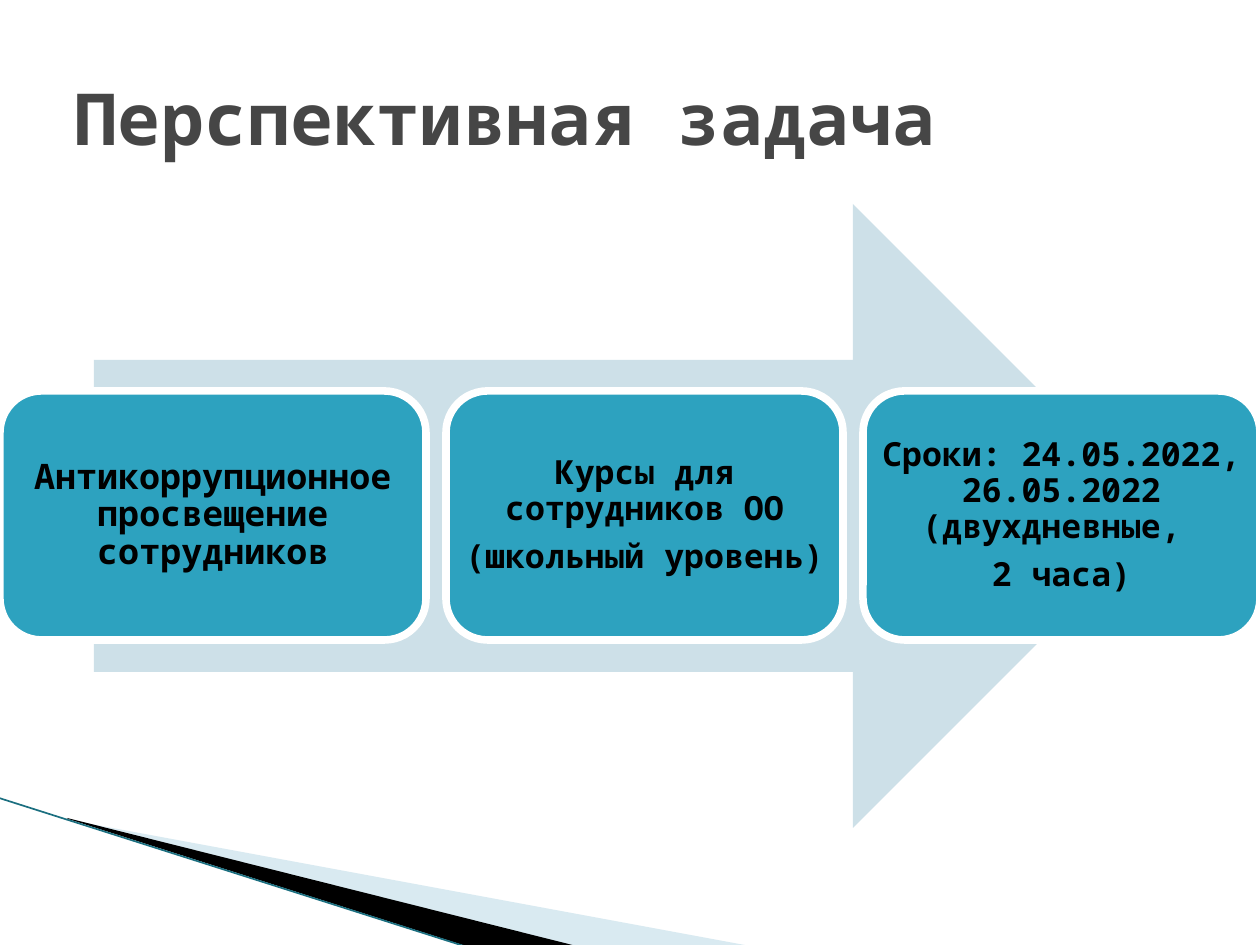
from lxml import etree
from pptx import Presentation, util as u
from pptx.dml.color import RGBColor
from pptx.enum import shapes, text
from pptx.oxml.ns import qn

SCALE = 914400 / 126  # EMU per px
FONT = "Noto Sans Mono"


def px(*values):
    return [u.Emu(round(value * SCALE)) for value in values]


def write(shape, lines, size, color="000000", align=text.PP_ALIGN.CENTER, spacing=0.9, gap=7, inset=0):
    frame = shape.text_frame
    frame.word_wrap = True
    frame.vertical_anchor = text.MSO_ANCHOR.MIDDLE
    frame.margin_left = frame.margin_right = frame.margin_top = frame.margin_bottom = px(inset)[0]
    for index, line in enumerate(lines):
        paragraph = frame.add_paragraph() if index else frame.paragraphs[0]
        paragraph.text = line
        paragraph.alignment = align
        paragraph.line_spacing = spacing
        if index:
            paragraph.space_before = u.Pt(gap)
        font = paragraph.font
        font.name, font.size, font.bold = FONT, u.Pt(size), True
        font.color.rgb = RGBColor.from_string(color)


presentation = Presentation()
presentation.slide_width, presentation.slide_height = px(1260, 945)
slide = presentation.slides.add_slide(presentation.slide_layouts[6])

# Corner wedges: points, colour, opacity in percent
wedges = [
    ([(69, 820), (750, 946), (575, 946), (69, 819)], "A0CBDC", 40),
    ([(67, 818), (576, 946), (469, 947), (68, 819)], "000000", 100),
]
for points, color, opacity in wedges:
    builder = slide.shapes.build_freeform(*points[0], scale=SCALE)
    builder.add_line_segments(points[1:], close=True)
    wedge = builder.convert_to_shape()
    wedge.shadow.inherit = False
    wedge.fill.solid()
    wedge.fill.fore_color.rgb = RGBColor.from_string(color)
    wedge.line.fill.background()
    if opacity < 100:
        fill_color = wedge.fill._xPr.find(qn("a:solidFill"))[0]
        etree.SubElement(fill_color, qn("a:alpha"), val=str(opacity * 1000))

edge = slide.shapes.add_connector(shapes.MSO_CONNECTOR.STRAIGHT, *px(-1, 798, 467, 947))
edge.line.color.rgb = RGBColor.from_string("1B6F80")
edge.line.width = u.Pt(0.95)
etree.SubElement(edge._element.spPr, qn("a:effectLst"))

arrow = slide.shapes.add_shape(shapes.MSO_SHAPE.RIGHT_ARROW, *px(94, 204, 1071, 624))
arrow.shadow.inherit = False
arrow.fill.solid()
arrow.fill.fore_color.rgb = RGBColor.from_string("CDE0E8")
arrow.line.fill.background()

# Step cards: left, width, text size, lines
cards = [
    (0, 426, 20, ["Антикоррупционное просвещение сотрудников"]),
    (446, 397, 19, ["Курсы для сотрудников ОО", "(школьный уровень)"]),
    (863, 397, 19, ["Сроки: 24.05.2022, 26.05.2022 (двухдневные, ", "2 часа)"]),
]
for left, width, size, lines in cards:
    card = slide.shapes.add_shape(shapes.MSO_SHAPE.ROUNDED_RECTANGLE, *px(left, 391, width, 249))
    card.shadow.inherit = False
    card.fill.solid()
    card.fill.fore_color.rgb = RGBColor.from_string("2DA2BF")
    card.line.color.rgb = RGBColor.from_string("FFFFFF")
    card.line.width = u.Pt(4.33)
    write(card, lines, size)

title = slide.shapes.add_textbox(*px(63, 38, 1134, 158))
write(title, ["Перспективная задача"], 41, color="464646", align=text.PP_ALIGN.LEFT, spacing=1.0, inset=12)

presentation.save("out.pptx")
